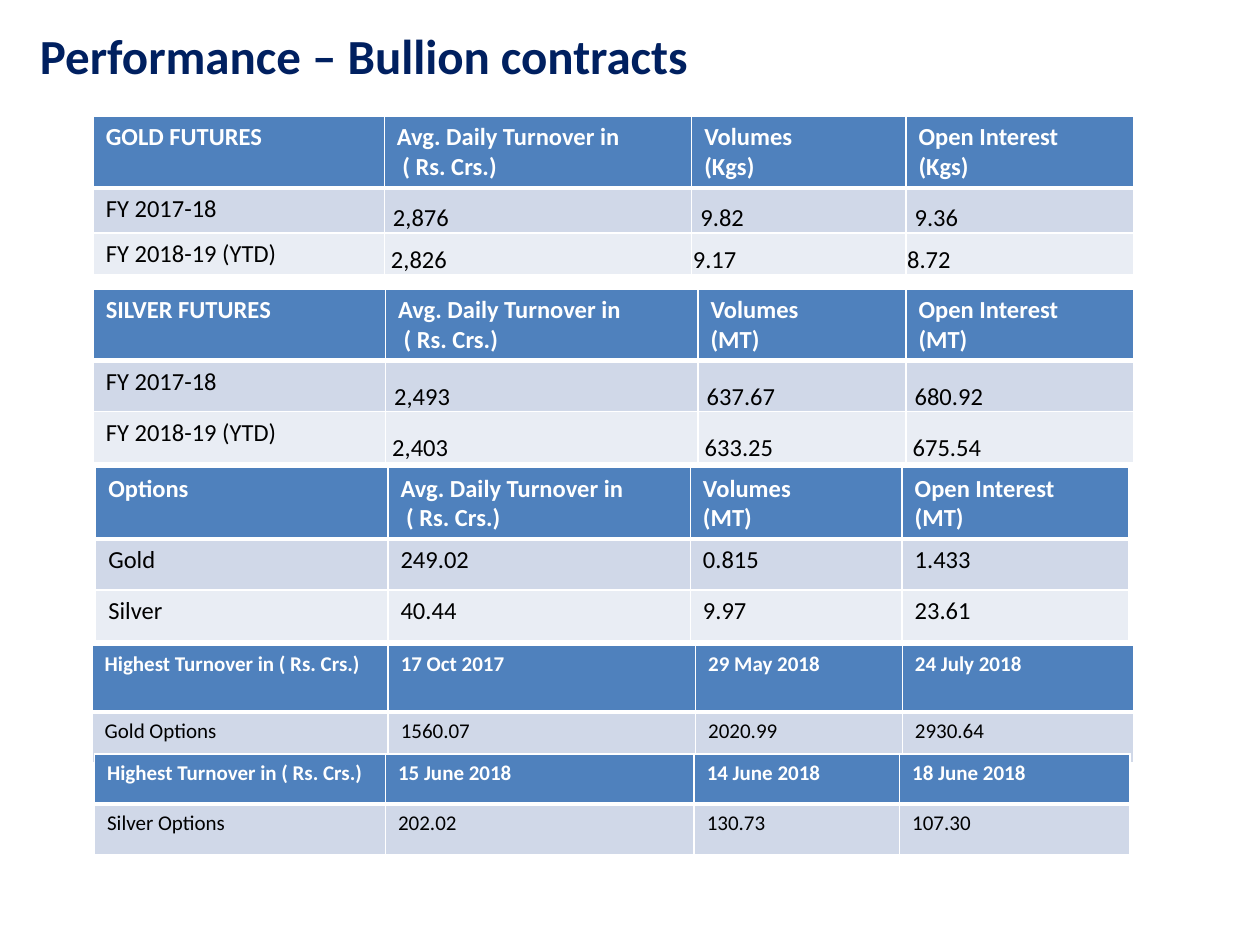
from dataclasses import dataclass
from typing import NamedTuple, Optional

import pptx
import pptx.dml.color
import pptx.enum.text
import pptx.oxml
import pptx.oxml.ns
import pptx.util

Pt = pptx.util.Pt
RGBColor = pptx.dml.color.RGBColor
BOTTOM = pptx.enum.text.MSO_ANCHOR.BOTTOM

FONT = "Calibri"
NAVY = RGBColor(0x00, 0x20, 0x60)
HEADER_BLUE = RGBColor(0x4F, 0x81, 0xBD)
BANDS = (RGBColor(0xD0, 0xD8, 0xE8), RGBColor(0xE9, 0xED, 0xF4))
WHITE = RGBColor(0xFF, 0xFF, 0xFF)
BLACK = RGBColor(0x00, 0x00, 0x00)
THIN, THICK = 1, 3


class Insets(NamedTuple):
    left: float
    top: float
    right: float
    bottom: float


WIDE = Insets(5, 0, 5, 0)
TIGHT = Insets(0.7, 0.7, 0.7, 0)


class Row(NamedTuple):
    height: float
    texts: tuple[str, ...]
    figure_insets: Optional[Insets] = None  # set where figures sit at the cell bottom


@dataclass
class ContractTable:
    left: float
    top: float
    columns: tuple[float, ...]
    text_size: float
    rows: list[Row]


def turnover_header(height: float, contract: str, unit: str) -> Row:
    return Row(height, (contract, "Avg. Daily Turnover in\n ( Rs. Crs.)",
                        f"Volumes\n({unit})", f"Open Interest\n({unit})"))


def peak_header(height: float, *dates: str) -> Row:
    return Row(height, ("Highest Turnover in ( Rs. Crs.)", *dates))


# Back to front
TABLES = [
    ContractTable(54.7, 267.1, (167, 172.8, 121, 129.6), 14, [
        turnover_header(29.2, "Options", "MT"),
        Row(29.2, ("Gold", "249.02", "0.815", "1.433")),
        Row(29.2, ("Silver", "40.44", "9.97", "23.61")),
    ]),
    ContractTable(53.3, 165.2, (167, 178.6, 118.8, 130.3), 14, [
        turnover_header(29.2, "SILVER FUTURES", "MT"),
        Row(29.2, ("FY 2017-18", "2,493", "637.67", "680.92"), WIDE),
        Row(29.2, ("FY 2018-19 (YTD)", " 2,403", " 633.25", " 675.54"), TIGHT),
    ]),
    ContractTable(53.3, 66.5, (166.3, 175.7, 122.4, 130.3), 14, [
        turnover_header(36.7, "GOLD FUTURES", "Kgs"),
        Row(25.9, ("FY 2017-18", "2,876", "9.82", "9.36"), WIDE),
        Row(21.6, ("FY 2018-19 (YTD)", " 2,826", "9.17", "8.72"), TIGHT),
    ]),
    ContractTable(52.6, 368.6, (169.2, 175.7, 118.1, 132.5), 12, [
        peak_header(38.2, "17 Oct 2017", "29 May 2018", "24 July 2018"),
        Row(29.2, ("Gold Options", "1560.07", "2020.99", "2930.64")),
    ]),
    ContractTable(54, 430.8, (166.3, 176.4, 117.4, 131.8), 12, [
        peak_header(28.6, "15 June 2018", "14 June 2018", "18 June 2018"),
        Row(29.2, ("Silver Options", "202.02", "130.73", "107.30")),
    ]),
]


def set_borders(cell, top: float, bottom: float) -> None:
    """Add white cell borders; call before the fill, which must follow them."""
    properties = cell._tc.get_or_add_tcPr()
    namespace = pptx.oxml.ns.nsdecls("a")
    for side, width in (("L", THIN), ("R", THIN), ("T", top), ("B", bottom)):
        properties.append(pptx.oxml.parse_xml(
            f'<a:ln{side} {namespace} w="{Pt(width)}"><a:solidFill>'
            f'<a:srgbClr val="{WHITE}"/></a:solidFill></a:ln{side}>'))


def style_font(paragraph, size: float, color: RGBColor, bold: bool) -> None:
    font = paragraph.font
    font.name, font.size, font.bold = FONT, Pt(size), bold
    font.color.rgb = color


def set_insets(area, insets: Insets) -> None:
    area.margin_left, area.margin_top = Pt(insets.left), Pt(insets.top)
    area.margin_right, area.margin_bottom = Pt(insets.right), Pt(insets.bottom)


def draw_table(slide, contract: ContractTable) -> None:
    grid = slide.shapes.add_table(
        len(contract.rows), len(contract.columns), Pt(contract.left), Pt(contract.top),
        Pt(sum(contract.columns)), Pt(sum(row.height for row in contract.rows))).table
    grid.horz_banding = False
    for column, width in zip(grid.columns, contract.columns):
        column.width = Pt(width)
    for r, row in enumerate(contract.rows):
        grid.rows[r].height = Pt(row.height)
        is_header = r == 0
        for c, text in enumerate(row.texts):
            cell = grid.cell(r, c)
            set_borders(cell, THICK if r == 1 else THIN, THICK if is_header else THIN)
            cell.fill.solid()
            cell.fill.fore_color.rgb = HEADER_BLUE if is_header else BANDS[(r - 1) % 2]
            if c > 0 and row.figure_insets:
                set_insets(cell, row.figure_insets)
                cell.vertical_anchor = BOTTOM
            cell.text = text
            for paragraph in cell.text_frame.paragraphs:
                style_font(paragraph, contract.text_size,
                           WHITE if is_header else BLACK, is_header)


def draw_title(slide, text: str) -> None:
    frame = slide.shapes.add_textbox(Pt(15.8), Pt(9.4), Pt(521.3), Pt(39.6)).text_frame
    frame.word_wrap = True
    set_insets(frame, Insets(7.2, 5.4, 7.2, 0))
    frame.text = text
    style_font(frame.paragraphs[0], 28, NAVY, True)


def main() -> None:
    presentation = pptx.Presentation()
    presentation.slide_width, presentation.slide_height = Pt(720), Pt(540)
    slide = presentation.slides.add_slide(presentation.slide_layouts[6])
    draw_title(slide, "Performance – Bullion contracts")
    for contract in TABLES:
        draw_table(slide, contract)
    presentation.save("out.pptx")


if __name__ == "__main__":
    main()
